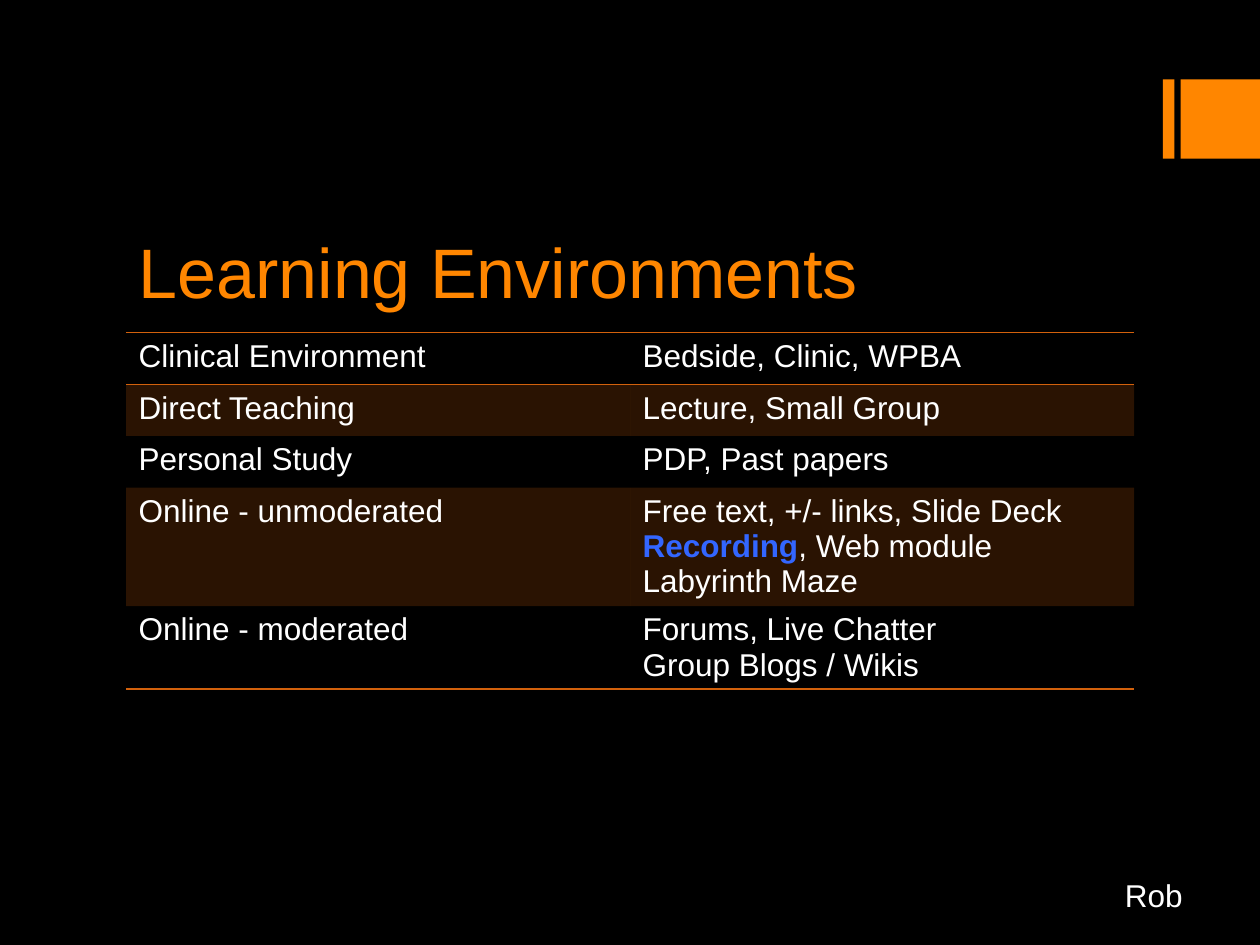
"""Build the Learning Environments slide with its table of teaching settings."""
import pptx
import pptx.dml.color
import pptx.enum.shapes
import pptx.enum.text
import pptx.oxml
import pptx.oxml.ns
import pptx.util
from pptx.util import Inches

COLORS = {
    "background": "000000",
    "accent": "FF8600",
    "rule": "D2610C",
    "text": "FFFFFF",
    "highlight": "3366FF",
}
NO_GRID_STYLE = "{2D5ABB26-0587-4C30-8999-92F81FD0307C}"


def add_text(paragraph, text, *, size=18, color="text", bold=False):
    span = paragraph.add_run()
    span.text = text
    span.font.name = "Arial"
    span.font.size = pptx.util.Pt(size)
    span.font.bold = bold
    span.font.color.rgb = pptx.dml.color.RGBColor.from_string(COLORS[color])


def add_rule(cell, side):
    cell._tc.get_or_add_tcPr().append(pptx.oxml.parse_xml(
        f'<a:{side} {pptx.oxml.ns.nsdecls("a")} w="12700"><a:solidFill>'
        f'<a:srgbClr val="{COLORS["rule"]}"/></a:solidFill></a:{side}>'
    ))


deck = pptx.Presentation()
deck.slide_width, deck.slide_height = Inches(10), Inches(7.5)
page = deck.slides.add_slide(deck.slide_layouts[5])
page.background.fill.solid()
page.background.fill.fore_color.rgb = pptx.dml.color.RGBColor.from_string(COLORS["background"])

for left, width in ((9.23, 0.09), (9.37, 0.63)):
    bar = page.shapes.add_shape(
        pptx.enum.shapes.MSO_SHAPE.RECTANGLE,
        Inches(left), Inches(0.63), Inches(width), Inches(0.63),
    )
    bar.shadow.inherit = False
    bar.fill.solid()
    bar.fill.fore_color.rgb = pptx.dml.color.RGBColor.from_string(COLORS["accent"])
    bar.line.fill.background()

title = page.shapes.title
title.left, title.top, title.width, title.height = Inches(1), Inches(1.27), Inches(8), Inches(1.26)
title.text_frame.auto_size = pptx.enum.text.MSO_AUTO_SIZE.NONE
title.text_frame.vertical_anchor = pptx.enum.text.MSO_ANCHOR.BOTTOM
heading = title.text_frame.paragraphs[0]
heading.alignment = pptx.enum.text.PP_ALIGN.LEFT
add_text(heading, "Learning Environments", size=40, color="accent")

environments = [
    ("Clinical Environment", ["Bedside, Clinic, WPBA"], 0.41),
    ("Direct Teaching", ["Lecture, Small Group"], 0.41),
    ("Personal Study", ["PDP, Past papers"], 0.41),
    (
        "Online - unmoderated",
        ["Free text, +/- links, Slide Deck", "Recording, Web module", "Labyrinth Maze"],
        0.94,
    ),
    ("Online - moderated", ["Forums, Live Chatter", "Group Blogs / Wikis"], 0.66),
]
frame = page.shapes.add_table(
    len(environments), 2, Inches(1), Inches(2.64), Inches(8), Inches(2.83)
)
table = frame.table
table.first_row = table.horz_banding = False
table._tbl.tblPr.find(pptx.oxml.ns.qn("a:tableStyleId")).text = NO_GRID_STYLE

for row, (environment, examples, height) in enumerate(environments):
    table.rows[row].height = Inches(height)
    for column, lines in enumerate(([environment], examples)):
        cell = table.cell(row, column)
        for index, line in enumerate(lines):
            paragraph = cell.text_frame.paragraphs[0] if index == 0 else cell.text_frame.add_paragraph()
            before, keyword, after = line.partition("Recording")
            if keyword:
                add_text(paragraph, keyword, color="highlight", bold=True)
            add_text(paragraph, after if keyword else before)
        if row == 0:
            add_rule(cell, "lnT")
        if row in (0, len(environments) - 1):
            add_rule(cell, "lnB")
        if row % 2:
            cell.fill.solid()
            cell.fill.fore_color.rgb = pptx.dml.color.RGBColor.from_string(COLORS["rule"])
            tint = cell._tc.tcPr.find(".//" + pptx.oxml.ns.qn("a:srgbClr"))
            tint.append(pptx.oxml.parse_xml(f'<a:alpha {pptx.oxml.ns.nsdecls("a")} val="20000"/>'))
        else:
            cell.fill.background()

box = page.shapes.add_textbox(Inches(8.83), Inches(6.9), Inches(0.99), Inches(0.4))
box.text_frame.word_wrap = True
box.text_frame.auto_size = pptx.enum.text.MSO_AUTO_SIZE.SHAPE_TO_FIT_TEXT
add_text(box.text_frame.paragraphs[0], "Rob")

deck.save("out.pptx")
